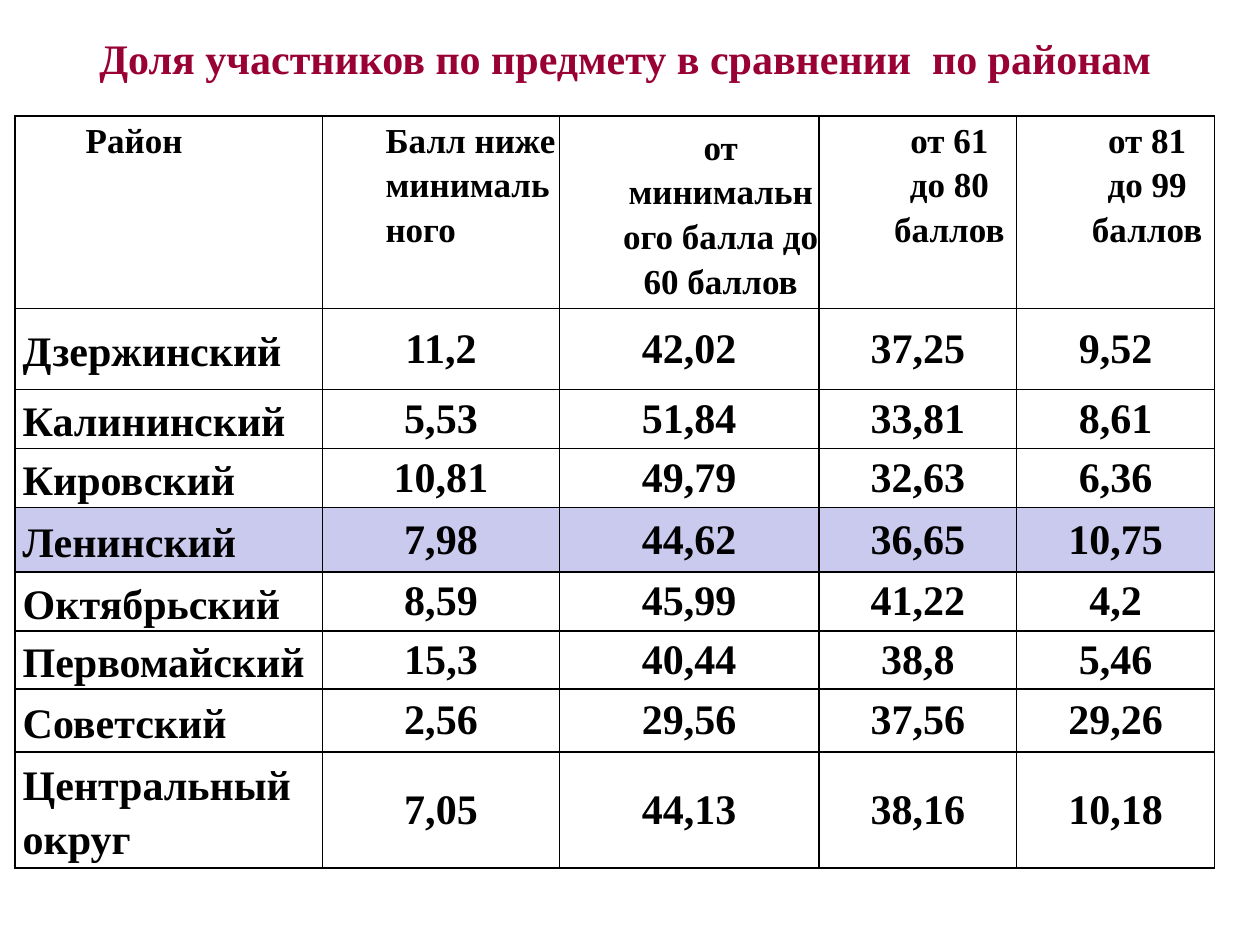
from lxml.etree import SubElement as Sub
from pptx import Presentation
from pptx.dml.color import RGBColor as RGB
from pptx.enum.text import MSO_ANCHOR as Anchor, PP_ALIGN as Align
from pptx.oxml.ns import qn
from pptx.util import Inches, Pt

FONT = "Times New Roman"
COLORS = {"title": "990033", "text": "000000", "line": "000000", "mark": "CACAEE"}
HEAD = ["Район", "Балл ниже минимального", "от минимального балла до 60 баллов",
        "от 61 до 80 баллов", "от 81 до 99 баллов"]
ROWS = [
    ["Дзержинский", "11,2", "42,02", "37,25", "9,52"],
    ["Калининский", "5,53", "51,84", "33,81", "8,61"],
    ["Кировский", "10,81", "49,79", "32,63", "6,36"],
    ["Ленинский", "7,98", "44,62", "36,65", "10,75"],
    ["Октябрьский", "8,59", "45,99", "41,22", "4,2"],
    ["Первомайский", "15,3", "40,44", "38,8", "5,46"],
    ["Советский", "2,56", "29,56", "37,56", "29,26"],
    ["Центральный округ", "7,05", "44,13", "38,16", "10,18"],
]
MARKED = "Ленинский"
WIDTHS = [2.44, 1.88, 2.06, 1.57, 1.57]
HEIGHTS = [1.53, 0.64, 0.47, 0.47, 0.51, 0.47, 0.46, 0.5, 0.92]


def add_run(par, text, size, color):
    run = par.add_run()
    run.text = text
    font = run.font
    font.name, font.size, font.bold = FONT, Pt(size), True
    font.color.rgb = RGB.from_string(COLORS[color])


def add_title(slide, left, top, width, height):
    title = slide.shapes.title
    title.left, title.top = Inches(left), Inches(top)
    title.width, title.height = Inches(width), Inches(height)
    frame = title.text_frame
    frame.word_wrap = True
    frame.vertical_anchor = Anchor.MIDDLE
    par = frame.paragraphs[0]
    par.alignment = Align.CENTER
    add_run(par, "Доля участников по предмету в сравнении  по районам ", 24, "title")


def set_edges(cell):
    props = cell._tc.get_or_add_tcPr()
    for side in ("lnL", "lnR", "lnT", "lnB"):
        line = Sub(props, qn("a:" + side), w=str(Pt(1)))
        fill = Sub(line, qn("a:solidFill"))
        Sub(fill, qn("a:srgbClr"), val=COLORS["line"])


def set_cell(cell, text, size, align, anchor, inset, marked=False):
    cell.margin_left = cell.margin_right = Inches(inset)
    cell.margin_top = cell.margin_bottom = 0
    cell.vertical_anchor = anchor
    set_edges(cell)
    if marked:
        cell.fill.solid()
        cell.fill.fore_color.rgb = RGB.from_string(COLORS["mark"])
    else:
        cell.fill.background()
    par = cell.text_frame.paragraphs[0]
    par.alignment = align
    add_run(par, text, size, "text")
    return par


def add_head(table):
    for col, text in enumerate(HEAD):
        align = Align.LEFT if col < 2 else Align.CENTER
        anchor = Anchor.MIDDLE if col == 2 else Anchor.TOP
        inset = 0 if col in (1, 2) else 0.06
        par = set_cell(table.cell(0, col), text, 20, align, anchor, inset)
        par.line_spacing = 1.15
        props = par._p.get_or_add_pPr()
        props.set("marL", str(Inches(0.5)))
        props.set("indent", "0")


def add_body(table):
    for row, vals in enumerate(ROWS, 1):
        for col, text in enumerate(vals):
            align, inset = (Align.CENTER, 0.07) if col else (Align.LEFT, 0.06)
            par = set_cell(table.cell(row, col), text, 24, align, Anchor.MIDDLE,
                           inset, vals[0] == MARKED)
            if col == 0:
                par.line_spacing = 1.15


def add_grid(slide, left, top, width, height):
    frame = slide.shapes.add_table(len(HEIGHTS), len(WIDTHS), Inches(left),
                                   Inches(top), Inches(width), Inches(height))
    table = frame.table
    table.first_row = table.horz_banding = False
    for col, size in zip(table.columns, WIDTHS):
        col.width = Inches(size)
    for row, size in zip(table.rows, HEIGHTS):
        row.height = Inches(size)
    add_head(table)
    add_body(table)


def main():
    deck = Presentation()
    deck.slide_width, deck.slide_height = Inches(10), Inches(7.5)
    slide = deck.slides.add_slide(deck.slide_layouts[5])
    add_title(slide, 0.28, 0.21, 9.45, 0.5)
    add_grid(slide, 0.12, 0.92, sum(WIDTHS), sum(HEIGHTS))
    deck.save("out.pptx")


if __name__ == "__main__":
    main()
